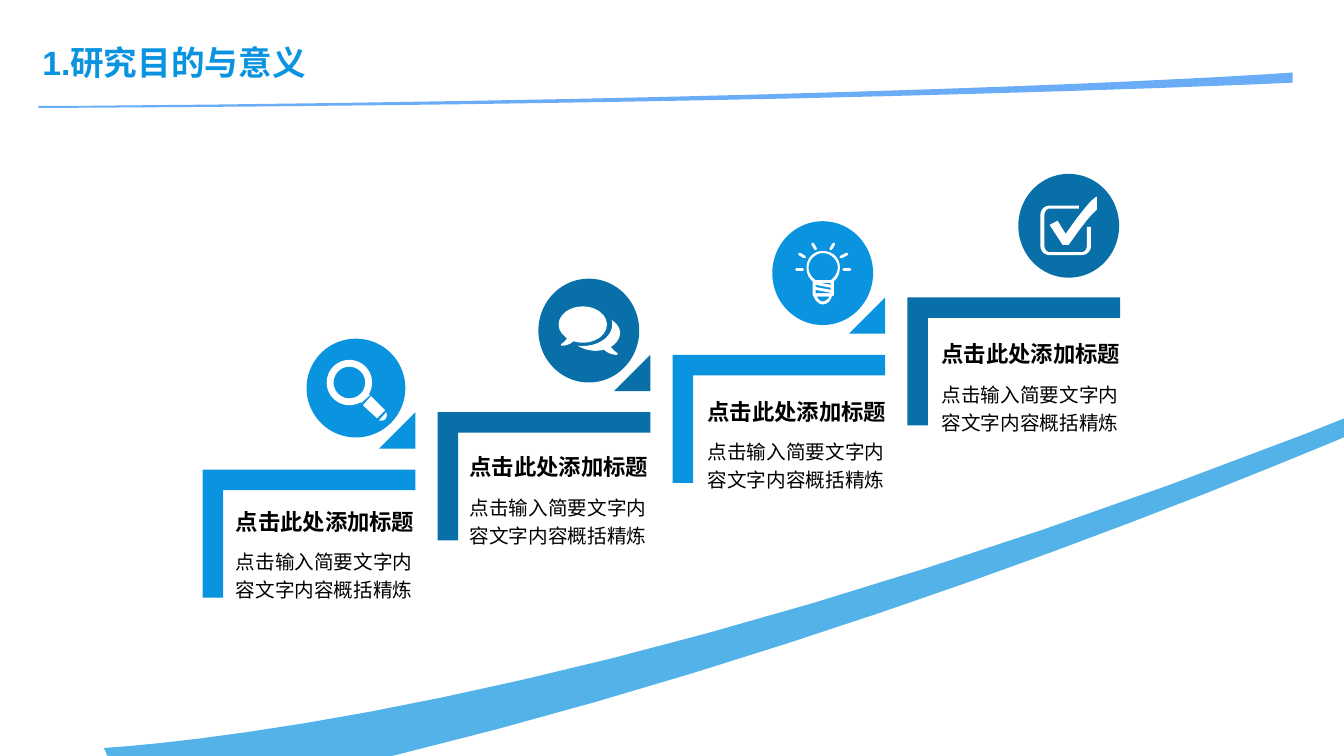
from lxml.etree import SubElement
from pptx import Presentation
from pptx.dml.color import RGBColor
from pptx.enum.lang import MSO_LANGUAGE_ID
from pptx.enum.shapes import MSO_CONNECTOR, MSO_SHAPE
from pptx.enum.text import MSO_ANCHOR, MSO_AUTO_SIZE, PP_ALIGN
from pptx.oxml.ns import qn
from pptx.util import Inches, Pt

COLORS = {"sky": "0A94E0", "deep": "086FA8", "header": "6AACF6",
          "white": "FFFFFF", "black": "000000"}
FONT = "Arial"
WIDTH, HEIGHT = 13.33, 7.5

# Staircase grid: each step moves one column right and one row up
LEFT, TOP = 2.43, 4.24
COLUMN, ROW = 2.33, 0.57

# Outlines are in hundredths of an inch: pairs are corners, sixes are curves
HEADER_LINE = [[(1282, 72), (1282, 82), (1237, 84), (757, 103, 243, 106, 59, 107),
                (38, 107), (38, 105), (81, 105), (815, 99, 1197, 78, 1281, 72)]]
SWOOSH = [[(103, 742), (132, 805), (184, 795), (736, 688, 1274, 462, 1465, 377),
           (1487, 367), (1482, 356), (1436, 374), (665, 691, 206, 735, 104, 742)]]
LENS_HANDLE = [
    [(5, 15), (14, 7), (13, 6), (4, 13)],
    [(15, 8), (29, 22), (21, 30), (7, 17)],
    [(30, 24), (31, 26, 31, 29, 29, 31), (28, 32, 25, 33, 23, 32)]]
BUBBLE_BACK = [
    [(22, -11), (23, -10, 23, -8, 23, -6), (23, 6, 10, 15, -6, 15), (-11, 15),
     (-6, 18, 0, 20, 7, 20), (20, 20, 31, 12, 31, 2), (31, -3, 27, -8, 22, -11)]]
BUBBLE_TAILS = [
    [(-20, 4), (-21, 8, -25, 12, -27, 13), (-28, 14, -28, 15, -26, 15),
     (-24, 15, -17, 14, -12, 7), (-7, 0, -20, 4, -20, 4)],
    [(20, 13), (22, 17, 26, 21, 28, 22), (29, 23, 29, 24, 27, 24),
     (25, 24, 17, 23, 13, 16), (8, 9, 20, 13, 20, 13)]]
BULB_GLASS = [
    [(9, 23), (-9, 23), (-10, 22), (-10, 8), (-14, 5, -16, 0, -16, -6),
     (-16, -15, -9, -22, 0, -22), (10, -22, 17, -15, 17, -6),
     (17, 0, 15, 5, 11, 8), (11, 22)],
    [(-7, 20), (8, 20), (8, 7), (12, 4, 15, -1, 15, -6), (15, -13, 8, -20, 0, -20),
     (-7, -20, -14, -13, -14, -6), (-14, -1, -12, 3, -7, 7)]]
BULB_CAP = [
    [(0, 31), (-5, 31, -9, 25, -9, 22), (-9, 20), (9, 20), (9, 22), (9, 25, 6, 31, 0, 31)],
    [(-6, 23), (-5, 25, -3, 28, 0, 28), (3, 28, 6, 25, 7, 23)]]
BULB_STROKES = [
    (-8, 8, 8, 8), (-8, 10, 8, 13), (-8, 15, 8, 18),
    (-26, -4, -20, -4), (21, -4, 27, -4), (-10, -29, -7, -24),
    (8, -24, 11, -29), (-23, -19, -18, -16), (18, -16, 24, -19)]
CHECK_MARK = [
    [(28, -29), (21, -27, -3, 8, -3, 8), (-11, -5), (-19, -1), (-6, 19), (0, 19),
     (0, 19, 19, -9, 28, -16)]]
CHECK_BOX = [
    [(-24, 20), (-24, 23, -22, 26, -19, 26), (13, 26), (16, 26, 18, 23, 18, 20),
     (18, 1), (22, 1), (22, 20), (22, 25, 18, 29, 13, 29), (-19, 29),
     (-24, 29, -28, 25, -28, 20), (-28, -11), (-28, -16, -24, -20, -19, -20),
     (10, -20), (10, -17), (-19, -17), (-22, -17, -24, -14, -24, -11)]]


def paint(shape, color):
    shape.shadow.inherit = False
    shape.fill.solid()
    shape.fill.fore_color.rgb = RGBColor.from_string(COLORS[color])
    shape.line.fill.background()


def add_preset(slide, kind, box, color, adjustments=()):
    shape = slide.shapes.add_shape(kind, *map(Inches, box))
    for index, value in enumerate(adjustments):
        shape.adjustments[index] = value
    paint(shape, color)
    return shape


def flatten(contour):
    """Turn corners and Bezier curves into a list of points."""
    points = []
    for part in contour:
        if len(part) == 2:
            points.append(part)
            continue
        corners = [points[-1], part[:2], part[2:4], part[4:]]
        for step in range(1, 17):
            t = step / 16
            weights = ((1 - t) ** 3, 3 * t * (1 - t) ** 2, 3 * t * t * (1 - t), t ** 3)
            points.append(tuple(sum(w * corner[axis] for w, corner in zip(weights, corners))
                                for axis in (0, 1)))
    return points


def add_outline(slide, contours, color, center=(0, 0)):
    builder = None
    for contour in contours:
        # Thousandths of an inch keep the curves smooth
        points = [(center[0] * 1000 + x * 10, center[1] * 1000 + y * 10)
                  for x, y in flatten(contour)]
        if builder is None:
            builder = slide.shapes.build_freeform(*points[0], scale=Inches(1) / 1000)
        else:
            builder.move_to(*points[0])
        builder.add_line_segments(points[1:], close=True)
    shape = builder.convert_to_shape()
    paint(shape, color)
    return shape


def add_stroke(slide, ends, center):
    x1, y1, x2, y2 = (Inches(center[i % 2] + value / 100) for i, value in enumerate(ends))
    connector = slide.shapes.add_connector(MSO_CONNECTOR.STRAIGHT, x1, y1, x2, y2)
    connector.line.width = Pt(2)
    connector.line.color.rgb = RGBColor.from_string(COLORS["white"])
    connector.line._get_or_add_ln().set("cap", "rnd")
    SubElement(connector._element.spPr, qn("a:effectLst"))


def write(shape, text, size, color, bold=False, wrap=True, spacing=None):
    frame = shape.text_frame
    frame.word_wrap = wrap
    frame.auto_size = MSO_AUTO_SIZE.NONE
    paragraph = frame.paragraphs[0]
    paragraph.alignment = PP_ALIGN.LEFT
    paragraph.line_spacing = spacing
    run = paragraph.add_run()
    run.text = text
    font = run.font
    font.name, font.size, font.bold = FONT, Pt(size), bold
    font.language_id = MSO_LANGUAGE_ID.SIMPLIFIED_CHINESE
    font.color.rgb = RGBColor.from_string(COLORS[color])
    SubElement(run._r.get_or_add_rPr(), qn("a:ea"), typeface=FONT)


def draw_lens(slide, center):
    x, y = center
    add_preset(slide, MSO_SHAPE.DONUT, (x - 0.29, y - 0.28, 0.45, 0.45), "white", [0.15])
    add_outline(slide, LENS_HANDLE, "white", center)


def draw_chat(slide, center):
    x, y = center
    add_outline(slide, BUBBLE_BACK, "white", center)
    # A dark rim separates the front bubble from the back one
    add_preset(slide, MSO_SHAPE.OVAL, (x - 0.34, y - 0.28, 0.57, 0.43), "deep")
    add_preset(slide, MSO_SHAPE.OVAL, (x - 0.3, y - 0.24, 0.48, 0.36), "white")
    for tail in BUBBLE_TAILS:
        add_outline(slide, [tail], "white", center)


def draw_bulb(slide, center):
    add_outline(slide, BULB_GLASS, "white", center)
    add_outline(slide, BULB_CAP, "white", center)
    for ends in BULB_STROKES:
        add_stroke(slide, ends, center)


def draw_check(slide, center):
    add_outline(slide, CHECK_MARK, "white", center)
    add_outline(slide, CHECK_BOX, "white", center)


# Per step: colour, icon, circle centre, circle size, text corner
STEPS = [
    ("sky", draw_lens, (3.53, 3.85), (0.98, 0.98), (2.24, 4.99)),
    ("deep", draw_chat, (5.84, 3.28), (1, 1.03), (4.56, 4.45)),
    ("sky", draw_bulb, (8.16, 2.71), (1, 1.03), (6.92, 3.9)),
    ("deep", draw_check, (10.6, 2.24), (1, 1.03), (9.24, 3.33)),
]


def add_step(slide, index, color, draw_icon, center, size, text_corner):
    left, top = LEFT + index * COLUMN, TOP - index * ROW
    corner = add_preset(slide, MSO_SHAPE.CORNER, (left, top, 1.27, 2.11), color, [0.16, 0.16])
    corner.rotation = 90
    if index < len(STEPS) - 1:
        add_preset(slide, MSO_SHAPE.ISOSCELES_TRIANGLE,
                   (left + 1.33, top - 0.15, 0.36, 0.36), color, [1])
    circle = (center[0] - size[0] / 2, center[1] - size[1] / 2, *size)
    add_preset(slide, MSO_SHAPE.OVAL, circle, color)
    draw_icon(slide, center)
    x, y = text_corner
    heading = slide.shapes.add_textbox(*map(Inches, (x, y, 2, 0.37)))
    write(heading, "点击此处添加标题", 16, "black", bold=True, wrap=False)
    body = slide.shapes.add_textbox(*map(Inches, (x, y + 0.37, 1.97, 0.67)))
    write(body, "点击输入简要文字内容文字内容概括精炼", 14, "black", spacing=1.2)


def main():
    presentation = Presentation()
    presentation.slide_width, presentation.slide_height = Inches(WIDTH), Inches(HEIGHT)
    slide = presentation.slides.add_slide(presentation.slide_layouts[5])

    # Header
    add_outline(slide, HEADER_LINE, "header")
    title = slide.shapes.title
    title.left, title.top, title.width, title.height = map(Inches, (0.32, 0.37, 3.07, 0.5))
    title.text_frame.vertical_anchor = MSO_ANCHOR.MIDDLE
    write(title, "1.研究目的与意义", 24, "sky", bold=True)

    # Staircase
    for index, step in enumerate(STEPS):
        add_step(slide, index, *step)

    # Translucent swoosh
    swoosh = add_outline(slide, SWOOSH, "sky")
    color = swoosh._element.spPr.find(qn("a:solidFill")).find(qn("a:srgbClr"))
    SubElement(color, qn("a:alpha"), val="70000")

    presentation.save("out.pptx")


if __name__ == "__main__":
    main()
